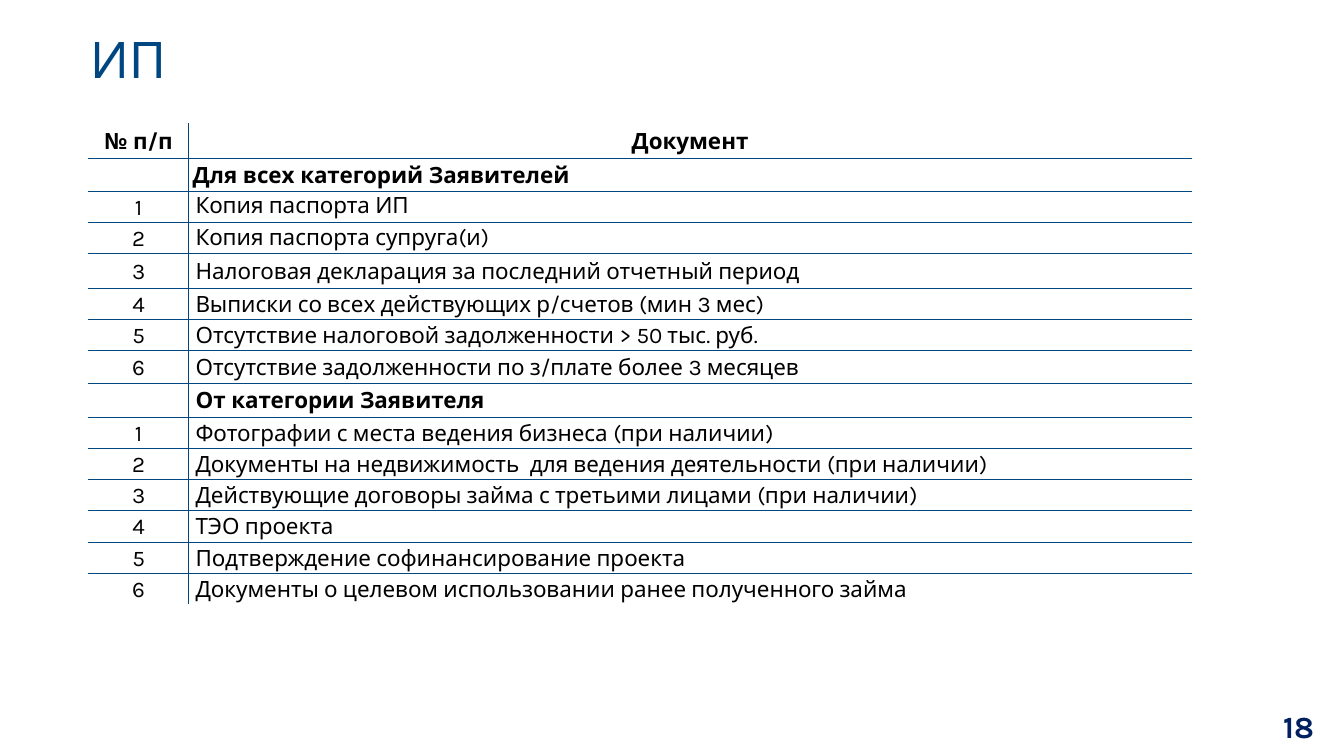
from lxml import etree
from pptx import Presentation
from pptx import util as u
from pptx.dml.color import RGBColor
from pptx.enum import text
from pptx.oxml.ns import qn

BLUE, WHITE, BLACK = "004680", "FFFFFF", "000000"
LEFT, CENTER, RIGHT = text.PP_ALIGN.LEFT, text.PP_ALIGN.CENTER, text.PP_ALIGN.RIGHT
MIDDLE, TOP = text.MSO_ANCHOR.MIDDLE, text.MSO_ANCHOR.TOP


def write(tf, words, size=16, color=BLACK, bold=False, align=LEFT, spacing=1.07):
    p = tf.paragraphs[0]
    p.alignment = align
    p.line_spacing = spacing
    r = p.add_run()
    r.text = words
    r.font.name = "Karla"
    r.font.size = u.Pt(size)
    r.font.bold = bold
    r.font.color.rgb = RGBColor.from_string(color)


def border(cell, side, color, width):
    ln = etree.SubElement(cell._tc.get_or_add_tcPr(), qn("a:ln" + side), w=str(u.Pt(width)))
    fill = etree.SubElement(ln, qn("a:solidFill"))
    etree.SubElement(fill, qn("a:srgbClr"), val=color)


prs = Presentation()
prs.slide_width, prs.slide_height = u.Inches(13.33), u.Inches(7.5)
s = prs.slides.add_slide(prs.slide_layouts[5])

title = s.shapes.title
title.left, title.top = u.Inches(0.8), u.Inches(0.17)
title.width, title.height = u.Inches(11.94), u.Inches(0.9)
title.text_frame.vertical_anchor = MIDDLE
write(title.text_frame, "ИП", size=36, color=BLUE, spacing=0.9)

rows = [
    ("№ п/п", "Документ", 0.34),
    ("", "Для всех категорий Заявителей", 0.33),
    ("1", "Копия паспорта ИП", 0.31),
    ("2", "Копия паспорта супруга(и)", 0.31),
    ("3", "Налоговая декларация за последний отчетный период", 0.34),
    ("4", "Выписки со всех действующих р/счетов (мин 3 мес)", 0.31),
    ("5", "Отсутствие налоговой задолженности > 50 тыс. руб.", 0.31),
    ("6", "Отсутствие задолженности по з/плате более 3 месяцев", 0.33),
    ("", "От категории Заявителя", 0.33),
    ("1", "Фотографии с места ведения бизнеса (при наличии)", 0.31),
    ("2", "Документы на недвижимость  для ведения деятельности (при наличии)", 0.31),
    ("3", "Действующие договоры займа с третьими лицами (при наличии)", 0.31),
    ("4", "ТЭО проекта", 0.31),
    ("5", "Подтверждение софинансирование проекта", 0.31),
    ("6", "Документы о целевом использовании ранее полученного займа", 0.31),
]
frame = s.shapes.add_table(len(rows), 2, u.Inches(0.88), u.Inches(1.23), u.Inches(10.94), u.Inches(4.77))
table = frame.table
table.first_row = table.horz_banding = False
table.columns[0].width, table.columns[1].width = u.Inches(0.99), u.Inches(9.95)

last = len(rows) - 1
for i, (number, document, height) in enumerate(rows):
    table.rows[i].height = u.Inches(height)
    for j, words in enumerate((number, document)):
        cell = table.cell(i, j)
        cell.margin_top = cell.margin_bottom = 0
        cell.margin_left = cell.margin_right = u.Inches(0.04 if i < 2 else 0.07)
        cell.vertical_anchor = TOP if j == 1 and i in (2, 3) else MIDDLE
        edges = {"L": j == 0, "R": j == 1, "T": i == 0, "B": i == last}
        for side, outer in edges.items():
            border(cell, side, WHITE if outer else BLUE, 1 if outer else 0.75)
        cell.fill.solid()
        cell.fill.fore_color.rgb = RGBColor.from_string(WHITE)
        heading = not number.isdigit()
        write(cell.text_frame, words, bold=heading, align=CENTER if i == 0 or j == 0 else LEFT)

sp = s.shapes.add_textbox(u.Inches(10.07), u.Inches(7.05), u.Inches(3.06), u.Inches(0.31))
tf = sp.text_frame
tf.word_wrap = True
tf.vertical_anchor = MIDDLE
write(tf, "18", size=22, color="002060", bold=True, align=RIGHT, spacing=1.0)

prs.save("out.pptx")
